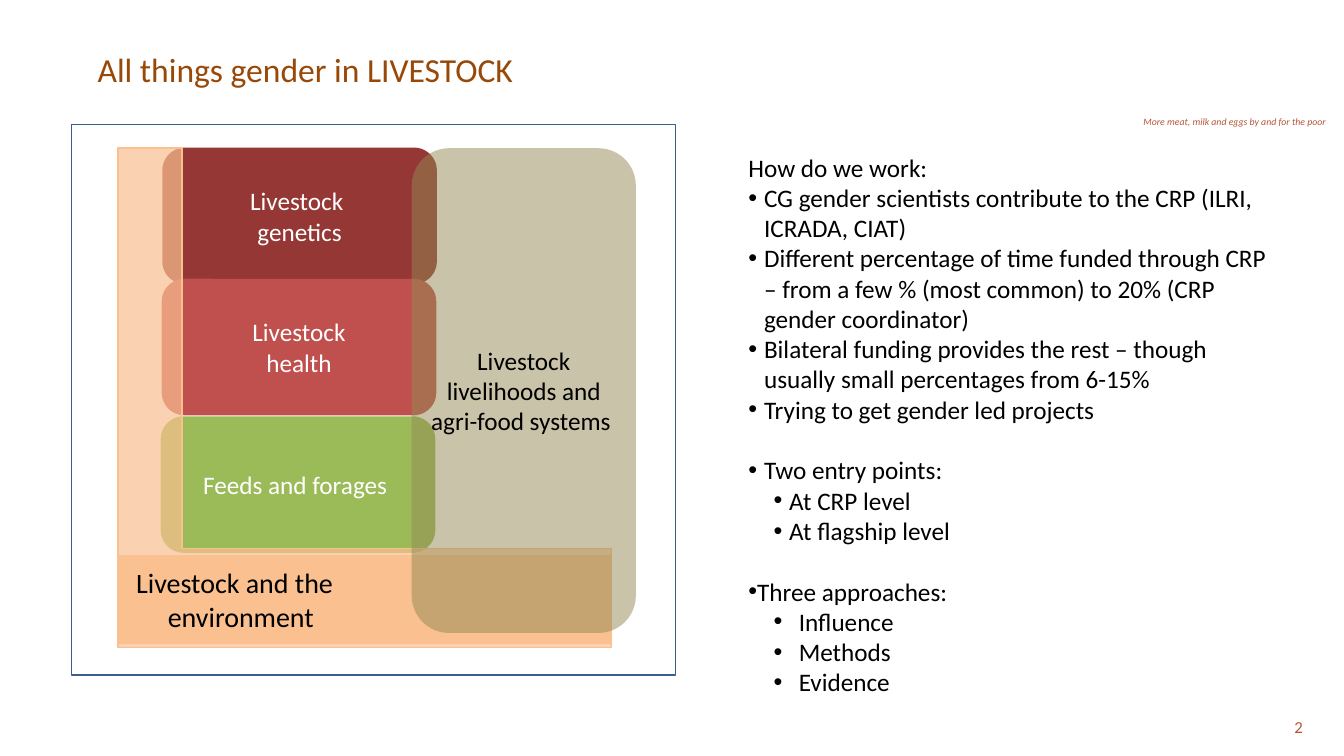
from dataclasses import dataclass

from pptx import Presentation
from pptx.dml.color import RGBColor
from pptx.enum.shapes import MSO_SHAPE as Shape
from pptx.enum.text import MSO_ANCHOR as Anchor, PP_ALIGN as Align
from pptx.oxml.ns import qn
from pptx.util import Cm, Pt
from lxml.etree import SubElement


@dataclass(frozen=True)
class Theme:
    font: str = "Calibri"
    title: str = "984807"
    accent: str = "B55638"
    dark: str = "000000"
    light: str = "FFFFFF"
    orange: str = "FAC090"
    khaki: str = "948A54"
    frame: str = "3A5F8C"
    title_size: int = 48
    environment_size: int = 40
    body_size: int = 36
    number_size: int = 24
    tagline_size: int = 14


THEME = Theme()

# Content; boxes are left, top, width, height in cm
TITLE = "All things gender in LIVESTOCK"
TAGLINE = "More meat, milk and eggs by and for the poor"
PAGE_NUMBER = "2"

FLAGSHIPS = [  # lines, left, top, colour
    (["Livestock ", "genetics"], 8.18, 7.44, "953735"),
    (["Livestock", "health"], 8.15, 14.05, "C0504D"),
    (["Feeds and forages "], 8.1, 20.98, "9BBB59"),
]
FLAGSHIP_SIZE = (13.84, 6.88)
LIVELIHOODS = ["Livestock livelihoods and agri-food systems "]
ENVIRONMENT = [("Livestock and the", 0.62), ("environment", 2.22)]  # text, indent

# Bullet styles: left margin and hanging indent in cm, outline level
STYLES = {
    "plain": None,
    "point": (0.79, 0.79, 0),
    "sub": (2.06, 0.79, 1),
    "tight": (0.43, 0.43, 0),
    "wide": (2.54, 1.27, 1),
}
GROUPS = [  # groups are one blank line apart
    [
        ("plain", "How do we work:"),
        ("point", "CG gender scientists contribute to the CRP (ILRI, ICRADA, CIAT)"),
        ("point", "Different percentage of time funded through CRP – from a few % "
                  "(most common) to 20% (CRP gender coordinator)"),
        ("point", "Bilateral funding provides the rest – though usually small "
                  "percentages from 6-15%"),
        ("point", "Trying to get gender led projects"),
    ],
    [
        ("point", "Two entry points:"),
        ("sub", "At CRP level"),
        ("sub", "At flagship level"),
    ],
    [
        ("tight", "Three approaches:"),
        ("wide", "Influence"),
        ("wide", "Methods"),
        ("wide", "Evidence"),
    ],
]
GROUP_GAP = Pt(43.5)


def set_lines(shape, lines, size, color, align=Align.LEFT, italic=False):
    """Write one paragraph per line and format its runs."""
    frame = shape.text_frame
    frame.text = "\n".join(lines)
    for paragraph in frame.paragraphs:
        paragraph.alignment = align
        for run in paragraph.runs:
            font = run.font
            font.name, font.size, font.italic = THEME.font, Pt(size), italic
            font.color.rgb = RGBColor.from_string(color)
    return frame.paragraphs


def add_text(slide, box, lines, size, color, wrap=True, **options):
    shape = slide.shapes.add_textbox(*map(Cm, box))
    shape.text_frame.word_wrap = wrap
    return set_lines(shape, lines, size, color, **options)


def add_block(slide, kind, box, fill=None, opacity=100, line=None):
    shape = slide.shapes.add_shape(kind, *map(Cm, box))
    shape.shadow.inherit = False
    shape.text_frame.vertical_anchor = Anchor.MIDDLE
    if fill:
        shape.fill.solid()
        shape.fill.fore_color.rgb = RGBColor.from_string(fill)
        if opacity < 100:
            color = shape._element.spPr.find(qn("a:solidFill")).find(qn("a:srgbClr"))
            SubElement(color, qn("a:alpha"), val=str(opacity * 1000))
    else:
        shape.fill.background()
    if line:
        shape.line.color.rgb = RGBColor.from_string(line)
        shape.line.width = Pt(2)
    else:
        shape.line.fill.background()
    return shape


def indent(paragraph, margin, hanging=0):
    properties = paragraph._p.get_or_add_pPr()
    properties.set("marL", str(int(Cm(margin))))
    properties.set("indent", str(-int(Cm(hanging))))
    return properties


def add_explanation(slide):
    items = [item for group in GROUPS for item in group]
    paragraphs = add_text(slide, (37.47, 7.54, 27.23, 29.49),
                          [text for _, text in items], THEME.body_size, THEME.dark)
    for paragraph, (style, _) in zip(paragraphs, items):
        if STYLES[style]:
            margin, hanging, level = STYLES[style]
            properties = indent(paragraph, margin, hanging)
            SubElement(properties, qn("a:buFont"), typeface="Arial")
            SubElement(properties, qn("a:buChar"), char="•")
            paragraph.level = level
    start = 0
    for group in GROUPS[:-1]:
        start += len(group)
        paragraphs[start].space_before = GROUP_GAP


def add_diagram(slide):
    # Flagship bars
    for lines, left, top, color in FLAGSHIPS:
        bar = add_block(slide, Shape.ROUNDED_RECTANGLE,
                        (left, top, *FLAGSHIP_SIZE), color)
        set_lines(bar, lines, THEME.body_size, THEME.light, Align.CENTER)

    # Environment: L-shaped surround and its label
    surround = add_block(slide, Shape.CORNER, (5.94, 7.47, 24.89, 25.15),
                         THEME.orange, 70, THEME.orange)
    surround.adjustments[0], surround.adjustments[1] = 0.2, 0.13
    base = add_block(slide, Shape.RECTANGLE, (5.99, 28.02, 24.79, 4.39),
                     THEME.orange, line=THEME.orange)
    paragraphs = set_lines(base, [text for text, _ in ENVIRONMENT],
                           THEME.environment_size, THEME.dark)
    for paragraph, (_, margin) in zip(paragraphs, ENVIRONMENT):
        indent(paragraph, margin)

    # Livelihoods column
    column = add_block(slide, Shape.ROUNDED_RECTANGLE,
                       (20.75, 7.47, 11.3, 24.43), THEME.khaki, 50)
    set_lines(column, LIVELIHOODS, THEME.body_size, THEME.dark, Align.CENTER)

    # Outer frame
    add_block(slide, Shape.RECTANGLE, (3.61, 6.27, 30.45, 27.76), line=THEME.frame)


def main():
    presentation = Presentation()
    presentation.slide_width, presentation.slide_height = Cm(67.74), Cm(38.1)
    slide = presentation.slides.add_slide(presentation.slide_layouts[6])

    # Page furniture and title
    add_text(slide, (64.14, 35.97, 1.78, 1.27), [PAGE_NUMBER],
             THEME.number_size, THEME.accent, align=Align.RIGHT)
    add_text(slide, (57.38, 5.72, 9.78, 0.86), [TAGLINE],
             THEME.tagline_size, THEME.accent, wrap=False, italic=True)
    add_text(slide, (4.67, 2.34, 34.93, 2.31), [TITLE],
             THEME.title_size, THEME.title)

    add_explanation(slide)
    add_diagram(slide)
    presentation.save("out.pptx")


if __name__ == "__main__":
    main()
